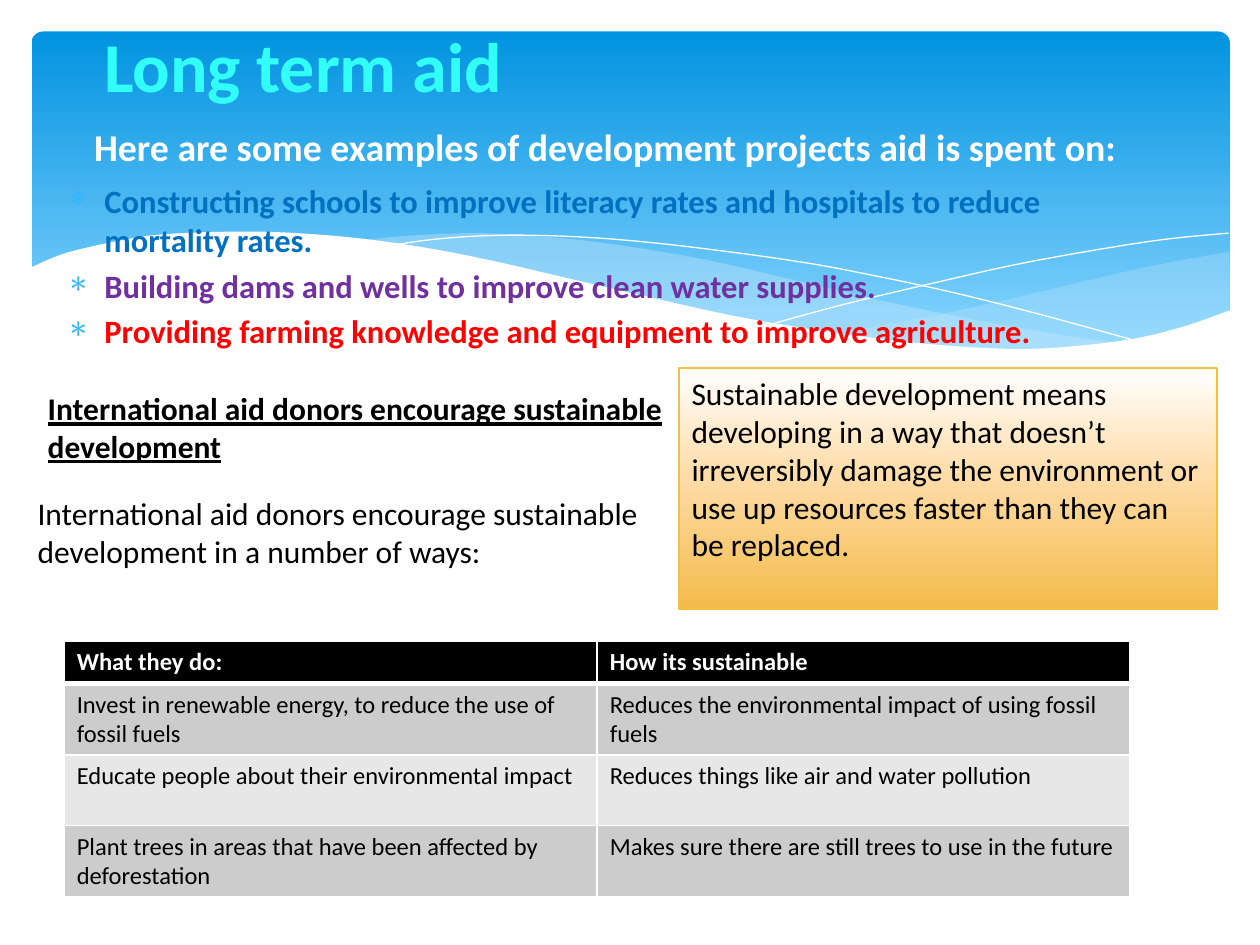
from dataclasses import dataclass
from typing import Optional

from lxml.etree import SubElement
from pptx import Presentation
from pptx.dml.color import RGBColor
from pptx.enum.shapes import MSO_SHAPE
from pptx.enum.text import MSO_ANCHOR, PP_ALIGN
from pptx.oxml import parse_xml
from pptx.oxml.ns import nsdecls, qn
from pptx.util import Emu, Pt

EMU_PER_PX = 9144  # 100 px to the inch
FONT = "Calibri"
STEPS = 8


@dataclass(frozen=True)
class Wave:
    """Curves of key points, joined end to end, in px."""
    curves: tuple
    fill: Optional[str] = None
    opacity: int = 100


@dataclass(frozen=True)
class Caption:
    text: str
    box: tuple
    size: float = 18
    color: str = "000000"
    bold: bool = False
    underline: bool = False
    align: PP_ALIGN = PP_ALIGN.LEFT


WAVES = (
    Wave((((975, 200), (935, 207), (891, 216), (832, 230), (753, 248), (661, 265)),
          ((661, 265), (705, 271), (757, 276), (803, 278), (844, 277),
           (889, 272), (928, 263), (949, 257), (976, 247)),
          ((976, 247), (976, 200))), "C6E7FC", 29),
    Wave((((893, 273), (837, 265), (775, 254), (706, 240), (629, 222), (569, 208),
           (514, 198), (465, 191), (420, 187), (380, 185), (344, 186), (313, 188), (286, 191)),
          ((286, 191), (342, 199), (404, 211), (449, 222), (530, 240), (601, 255),
           (665, 266), (722, 274), (773, 277), (818, 278), (857, 277), (893, 273))),
         "C6E7FC", 40),
    Wave((((309, 195), (344, 190), (387, 187), (433, 187), (489, 190), (556, 197),
           (636, 208), (695, 219), (760, 233), (831, 251), (907, 272)),)),
    Wave((((613, 257), (672, 241), (748, 223), (806, 210), (866, 199),
           (924, 190), (975, 185)),)),
    Wave((((977, 246), (940, 259), (899, 269), (850, 275), (809, 277), (761, 275),
           (708, 270), (648, 262), (579, 250), (503, 233), (447, 220), (391, 207),
           (340, 197), (292, 190), (250, 186), (211, 184), (177, 184), (146, 185),
           (119, 187), (95, 191), (67, 197), (46, 203), (23, 213)),
          ((23, 213), (23, 329)), ((23, 329), (977, 329)), ((977, 329), (977, 246))),
         "FFFFFF"),
)

BULLETS = (
    ("Constructing schools to improve literacy rates and hospitals to reduce mortality rates.",
     "0070C0"),
    ("Building dams and wells to improve clean water supplies.", "7030A0"),
    ("Providing farming knowledge and equipment to improve agriculture.", "FF0000"),
)

CAPTIONS = (
    Caption("Long term aid", (28, 13, 425, 77), 40, "32FFF8", bold=True, align=PP_ALIGN.CENTER),
    Caption("International aid donors encourage sustainable development",
            (28, 304, 528, 71), bold=True, underline=True),
    Caption("International aid donors encourage sustainable development in a number of ways:",
            (20, 387, 543, 71)),
)

DEFINITION = ("Sustainable development means developing in a way that doesn’t irreversibly "
              "damage the environment or use up resources faster than they can be replaced.")

TABLE_ROWS = (
    ("What they do:", "How its sustainable"),
    ("Invest in renewable energy, to reduce the use of fossil fuels",
     "Reduces the environmental impact of using fossil fuels"),
    ("Educate people about their environmental impact",
     "Reduces things like air and water pollution"),
    ("Plant trees in areas that have been affected by deforestation",
     "Makes sure there are still trees to use in the future"),
)


def px(*lengths: int) -> list:
    return [Emu(round(length * EMU_PER_PX)) for length in lengths]


def rgb(color: str) -> RGBColor:
    return RGBColor.from_string(color)


def write(para, text: str, *, size: float, color: str = "000000", bold: bool = False,
          underline: bool = False, align: PP_ALIGN = PP_ALIGN.LEFT) -> None:
    para.alignment = align
    span = para.add_run()
    span.text = text
    font = span.font
    font.name, font.size, font.bold, font.underline = FONT, Pt(size), bold, underline
    font.color.rgb = rgb(color)


def fill_gradient(shape, stops: tuple) -> None:
    """Fill from top to bottom with (percent, colour) stops."""
    shape.fill.gradient()
    gradient = shape.fill._fill._gradFill
    marks = "".join(f'<a:gs pos="{percent * 1000}"><a:srgbClr val="{color}"/></a:gs>'
                    for percent, color in stops)
    gradient.getparent().replace(gradient, parse_xml(
        f'<a:gradFill {nsdecls("a")} rotWithShape="1"><a:gsLst>{marks}</a:gsLst>'
        '<a:lin ang="5400000" scaled="0"/></a:gradFill>'))


def smooth(points: tuple) -> list:
    """Sample a Catmull-Rom curve through the points."""
    if len(points) == 2:
        return list(points)
    padded = (points[0], *points, points[-1])
    sampled = [points[0]]
    for before, start, end, after in zip(padded, padded[1:], padded[2:], padded[3:]):
        for step in range(1, STEPS + 1):
            t = step / STEPS
            sampled.append(tuple(
                (2 * b + (c - a) * t + (2 * a - 5 * b + 4 * c - d) * t ** 2
                 + (3 * b - a - 3 * c + d) * t ** 3) / 2
                for a, b, c, d in zip(before, start, end, after)))
    return sampled


def draw_wave(page, wave: Wave) -> None:
    points = [px(*point) for curve in wave.curves for point in smooth(curve)]
    builder = page.shapes.build_freeform(*points[0], scale=1.0)
    builder.add_line_segments(points[1:], close=wave.fill is not None)
    shape = builder.convert_to_shape()
    shape.shadow.inherit = False
    if wave.fill is None:
        shape.fill.background()
        shape.line.color.rgb = rgb("FFFFFF")
        shape.line.width = Pt(0)
        return
    shape.line.fill.background()
    shape.fill.solid()
    shape.fill.fore_color.rgb = rgb(wave.fill)
    color = shape.fill._xPr.find(qn("a:solidFill"))[0]
    SubElement(color, qn("a:alpha"), val=str(wave.opacity * 1000))


def draw_banner(page) -> None:
    banner = page.shapes.add_shape(MSO_SHAPE.ROUNDED_RECTANGLE, *px(25, 25, 951, 270))
    banner.adjustments[0] = 0.034
    banner.shadow.inherit = False
    banner.line.fill.background()
    fill_gradient(banner, ((0, "0293E0"), (90, "83D3FE")))
    for wave in WAVES:
        draw_wave(page, wave)


def place_title(page) -> None:
    title = page.shapes.title
    page.shapes._spTree.append(title._element)  # in front of the banner
    title.left, title.top, title.width, title.height = px(20, 76, 921, 80)
    title.text_frame.vertical_anchor = MSO_ANCHOR.MIDDLE
    write(title.text_frame.paragraphs[0],
          "Here are some examples of development projects aid is spent on:",
          size=21.6, color="FFFFFF", bold=True, align=PP_ALIGN.CENTER)


def draw_bullets(page) -> None:
    frame = page.shapes.add_textbox(*px(43, 139, 858, 150)).text_frame
    frame.word_wrap = True
    for index, (text, color) in enumerate(BULLETS):
        para = frame.add_paragraph() if index else frame.paragraphs[0]
        write(para, text, size=18.6, color=color, bold=True)
        para.space_before = Pt(3.7)
        properties = para._p.get_or_add_pPr()
        indent = px(30)[0]
        properties.set("marL", str(indent))
        properties.set("indent", str(-indent))
        SubElement(SubElement(properties, qn("a:buClr")), qn("a:srgbClr"), val="31B6FD")
        SubElement(properties, qn("a:buChar"), char="∗")


def draw_caption(page, caption: Caption) -> None:
    frame = page.shapes.add_textbox(*px(*caption.box)).text_frame
    frame.word_wrap = True
    write(frame.paragraphs[0], caption.text, size=caption.size, color=caption.color,
          bold=caption.bold, underline=caption.underline, align=caption.align)


def draw_definition(page) -> None:
    box = page.shapes.add_shape(MSO_SHAPE.RECTANGLE, *px(539, 292, 427, 192))
    box.shadow.inherit = False
    fill_gradient(box, ((0, "FFFFFF"), (44, "FFDDAA"), (100, "F4BB4A")))
    box.line.color.rgb = rgb("F5C040")
    box.line.width = Pt(0.75)
    box.text_frame.word_wrap = True
    box.text_frame.vertical_anchor = MSO_ANCHOR.TOP
    write(box.text_frame.paragraphs[0], DEFINITION, size=18)


def draw_table(page) -> None:
    table = page.shapes.add_table(len(TABLE_ROWS), 2, *px(51, 509, 846, 200)).table
    for index, texts in enumerate(TABLE_ROWS):
        header = index == 0
        table.rows[index].height = px(32 if header else 56)[0]
        fill = "000000" if header else ("E7E7E7", "CCCCCC")[index % 2]
        for cell, text in zip(table.rows[index].cells, texts):
            widths = {"L": 1, "R": 1, "T": 3 if index == 1 else 1, "B": 3 if header else 1}
            for side, width in widths.items():
                line = SubElement(cell._tc.get_or_add_tcPr(), qn(f"a:ln{side}"), w=str(Pt(width)))
                SubElement(SubElement(line, qn("a:solidFill")), qn("a:srgbClr"), val="FFFFFF")
            cell.fill.solid()
            cell.fill.fore_color.rgb = rgb(fill)
            write(cell.text_frame.paragraphs[0], text, size=14, bold=header,
                  color="FFFFFF" if header else "000000")


def main() -> None:
    deck = Presentation()
    deck.slide_width, deck.slide_height = px(1000, 750)
    page = deck.slides.add_slide(deck.slide_layouts.get_by_name("Title Only"))
    draw_banner(page)
    draw_bullets(page)
    place_title(page)
    for caption in CAPTIONS:
        draw_caption(page, caption)
    draw_definition(page)
    draw_table(page)
    deck.save("out.pptx")


if __name__ == "__main__":
    main()
